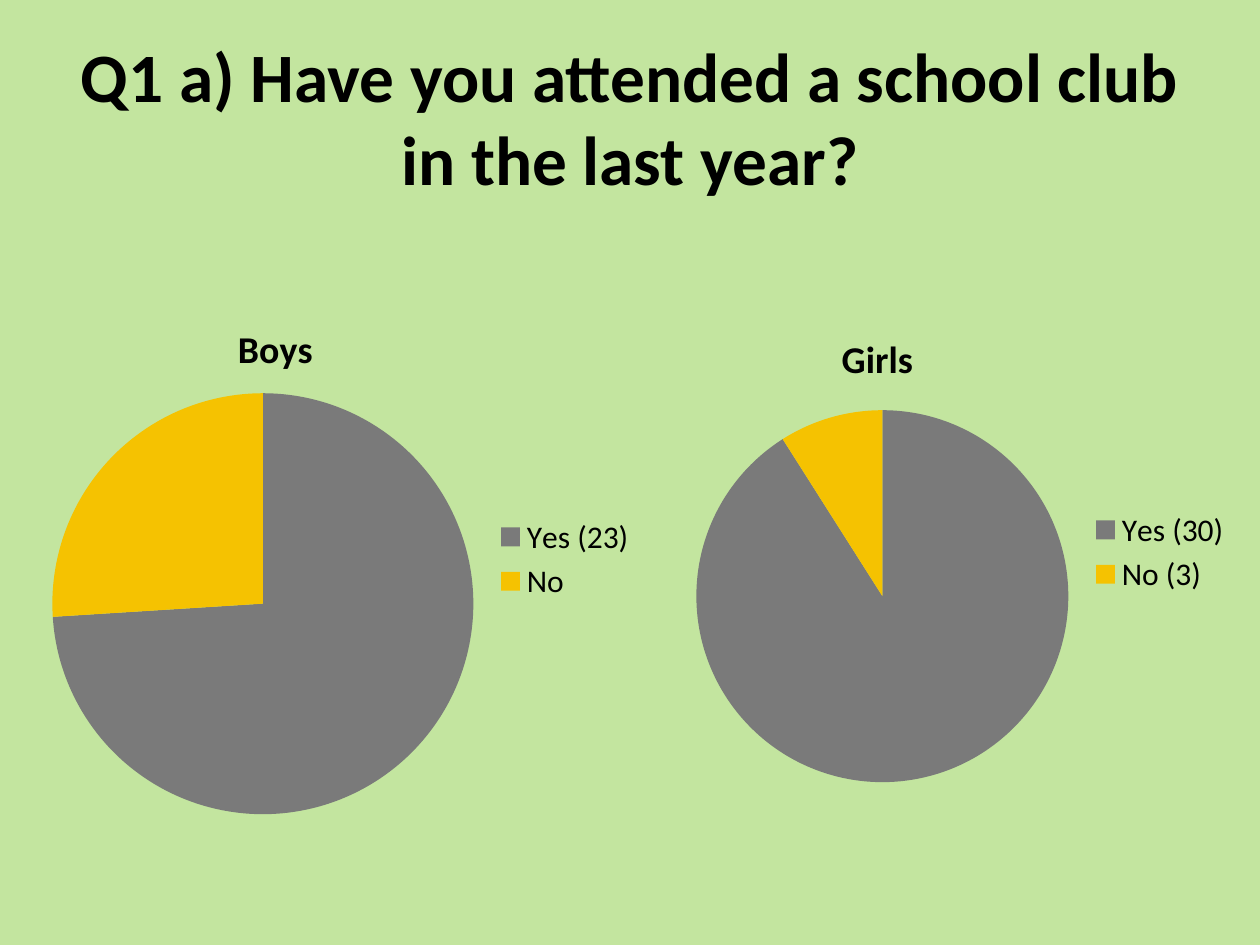
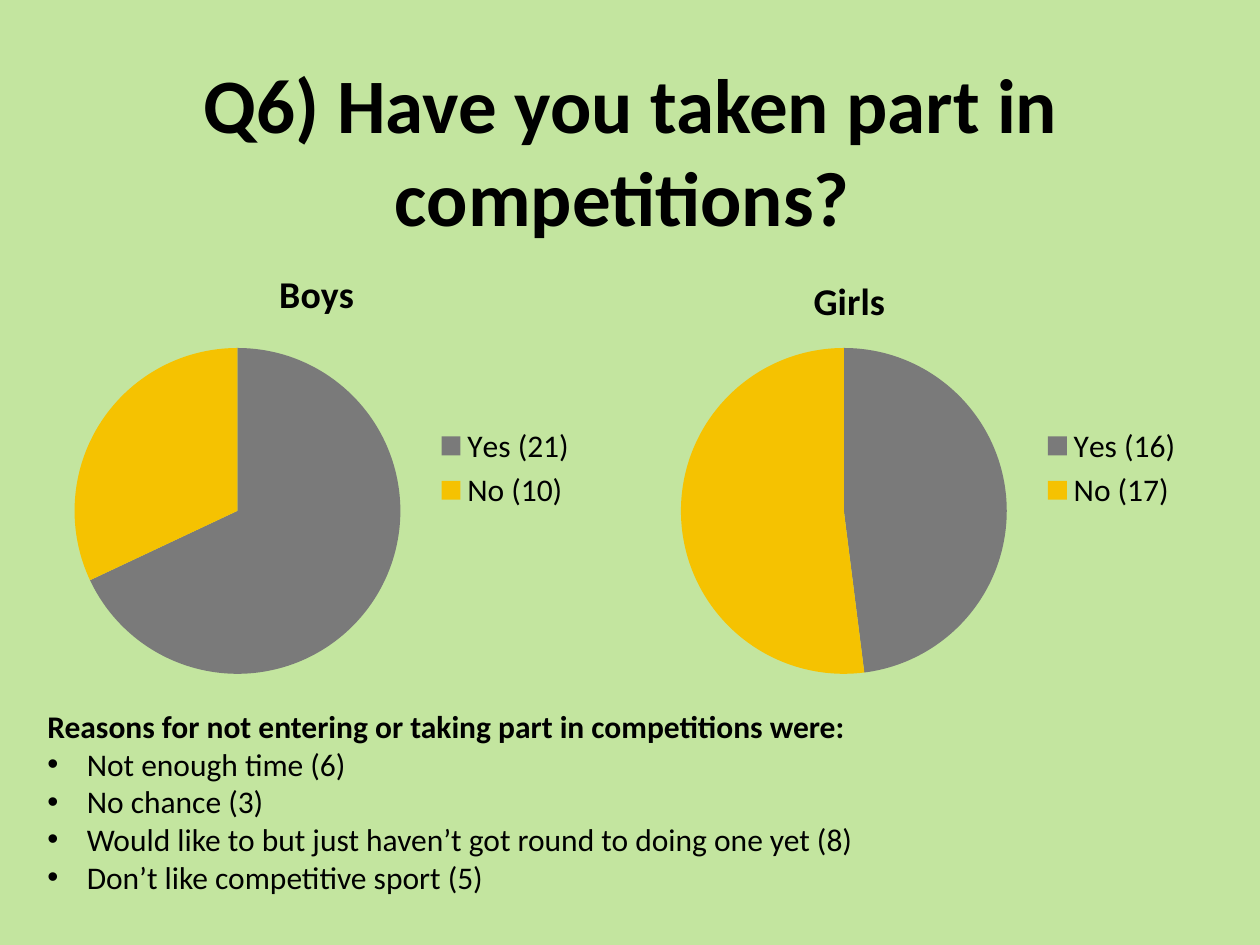
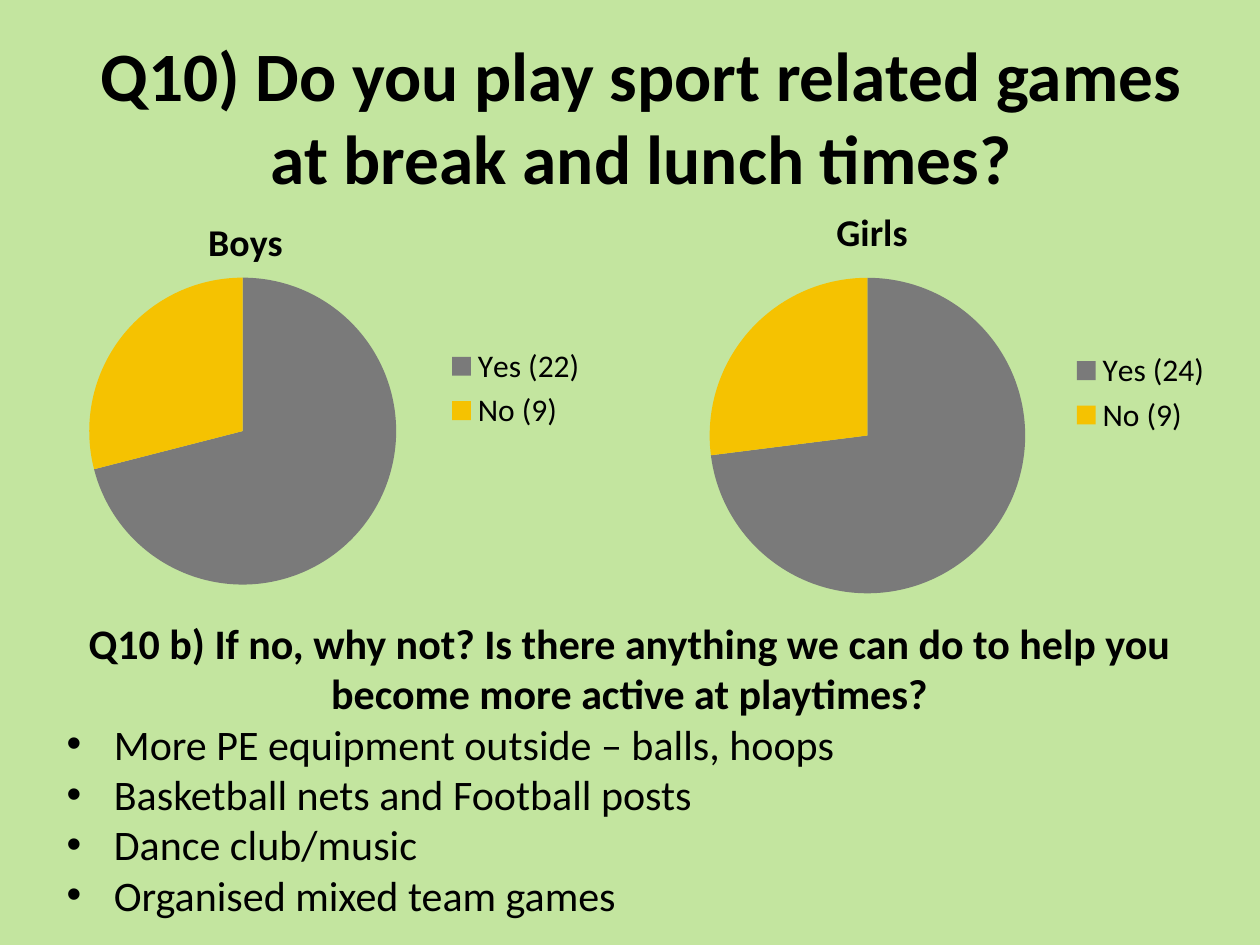
"""Builds three survey slides that compare boys' and girls' answers in pie charts."""

from lxml.etree import SubElement
from pptx import Presentation
from pptx.chart.data import CategoryChartData
from pptx.dml.color import RGBColor
from pptx.enum.chart import XL_CHART_TYPE, XL_LEGEND_POSITION
from pptx.enum.text import MSO_ANCHOR, MSO_AUTO_SIZE, PP_ALIGN
from pptx.oxml.ns import qn
from pptx.util import Pt

FONT = "Calibri"
TEXT = "000000"
BACKGROUND = "C3E59F"
ANSWER_COLORS = ("7A7A7A", "F5C201")


def color(hex_string):
    return RGBColor.from_string(hex_string)


def set_font(font, size, bold):
    font.name = FONT
    font.size = Pt(size)
    font.bold = bold
    font.color.rgb = color(TEXT)


class SurveyDeck:
    def __init__(self):
        self.presentation = Presentation()
        self.presentation.slide_width = Pt(720)
        self.presentation.slide_height = Pt(540)
        fill = self.presentation.slide_master.background.fill
        fill.solid()
        fill.fore_color.rgb = color(BACKGROUND)
        self.slide = None

    def add_slide(self, question, box, size):
        layout = self.presentation.slide_layouts[5]
        self.slide = self.presentation.slides.add_slide(layout)
        title = self.slide.shapes.title
        title.left, title.top, title.width, title.height = map(Pt, box)
        frame = title.text_frame
        frame.text = question
        frame.auto_size = MSO_AUTO_SIZE.NONE
        frame.word_wrap = True
        frame.vertical_anchor = MSO_ANCHOR.MIDDLE
        paragraph = frame.paragraphs[0]
        paragraph.alignment = PP_ALIGN.CENTER
        set_font(paragraph.font, size, True)

    def add_pie(self, group, box, answers, title_at=None):
        data = CategoryChartData()
        data.categories = list(answers)
        data.add_series(group, list(answers.values()))
        chart = self.slide.shapes.add_chart(
            XL_CHART_TYPE.PIE, *map(Pt, box), data
        ).chart
        set_font(chart.font, 18, False)
        chart.has_title = True
        frame = chart.chart_title.text_frame
        frame.text = group
        set_font(frame.paragraphs[0].font, 21.6, True)
        if title_at:
            self.place_chart_title(chart, box, title_at)
        chart.has_legend = True
        chart.legend.position = XL_LEGEND_POSITION.RIGHT
        chart.legend.include_in_layout = False
        plot = chart.plots[0]
        plot.vary_by_categories = True
        for index, answer_color in enumerate(ANSWER_COLORS):
            fill = plot.series[0].points[index].format.fill
            fill.solid()
            fill.fore_color.rgb = color(answer_color)

    def place_chart_title(self, chart, box, title_at):
        left, top, width, height = box
        title = chart.chart_title._element
        layout = title.get_or_add_layout() if hasattr(title, "get_or_add_layout") else title.find(qn("c:layout"))
        if layout is None:
            layout = SubElement(title, qn("c:layout"))
            title.find(qn("c:tx")).addnext(layout)
        manual = SubElement(layout, qn("c:manualLayout"))
        settings = {
            "xMode": "edge",
            "yMode": "edge",
            "x": (title_at[0] - left) / width,
            "y": (title_at[1] - top) / height,
        }
        for name, value in settings.items():
            SubElement(manual, qn(f"c:{name}")).set("val", str(value))

    def add_reasons(self, heading, reasons, box, size, indent, alignment):
        frame = self.slide.shapes.add_textbox(*map(Pt, box)).text_frame
        frame.word_wrap = True
        frame.text = "\n".join([heading, *reasons])
        first, *bulleted = frame.paragraphs
        first.alignment = alignment
        set_font(first.font, size, True)
        for paragraph in bulleted:
            set_font(paragraph.font, size, False)
            properties = paragraph._p.get_or_add_pPr()
            properties.set("marL", str(Pt(indent)))
            properties.set("indent", str(-Pt(indent)))
            bullet_font = SubElement(properties, qn("a:buFont"))
            bullet_font.set("typeface", "Arial")
            SubElement(properties, qn("a:buChar")).set("char", "•")
            properties.append(properties.find(qn("a:defRPr")))


def main():
    deck = SurveyDeck()

    deck.add_slide(
        "Q1 a) Have you attended a school club in the last year?",
        (36, 21.6, 648, 90), 39.6,
    )
    deck.add_pie("Boys", (20, 140, 351, 359), {"Yes (23)": 74, "No ": 26}, (132, 180))
    deck.add_pie("Girls ", (388, 151, 323, 329), {"Yes (30)": 91, "No (3)": 9}, (477, 186))

    deck.add_slide(
        "Q6) Have you taken part in competitions? ",
        (36.7, 15, 648, 140.4), 44,
    )
    deck.add_pie("Boys", (25, 140, 312, 255), {"Yes (21)": 68, "No (10)": 32})
    deck.add_pie("Girls", (371.5, 140, 312, 255), {"Yes (16)": 48, "No (17)": 52}, (461, 152.5))
    deck.add_reasons(
        "Reasons for not entering or taking part in competitions were:",
        [
            "Not enough time (6)",
            "No chance (3)",
            "Would like to but just haven’t got round to doing one yet (8)",
            "Don’t like competitive sport (5)",
        ],
        (20, 400.3, 612, 116.6), 18, 22.5, PP_ALIGN.LEFT,
    )

    deck.add_slide(
        "Q10) Do you play sport related games at break and lunch times?",
        (42.5, 21, 648, 90), 39.6,
    )
    deck.add_pie("Boys", (25, 100, 318, 244), {"Yes (22)": 71, "No (9)": 29}, (115, 119))
    deck.add_pie("Girls", (382, 100, 318, 249), {"Yes (24)": 73, "No (9)": 27}, (474, 113.5))
    deck.add_reasons(
        "Q10 b) If no, why not? Is there anything we can do to help you "
        "become more active at playtimes?",
        [
            "More PE equipment outside – balls, hoops",
            "Basketball nets and Football posts",
            "Dance club/music",
            "Organised mixed team games",
        ],
        (31, 349.2, 657.4, 181.4), 24, 27, PP_ALIGN.CENTER,
    )

    deck.presentation.save("out.pptx")


if __name__ == "__main__":
    main()
